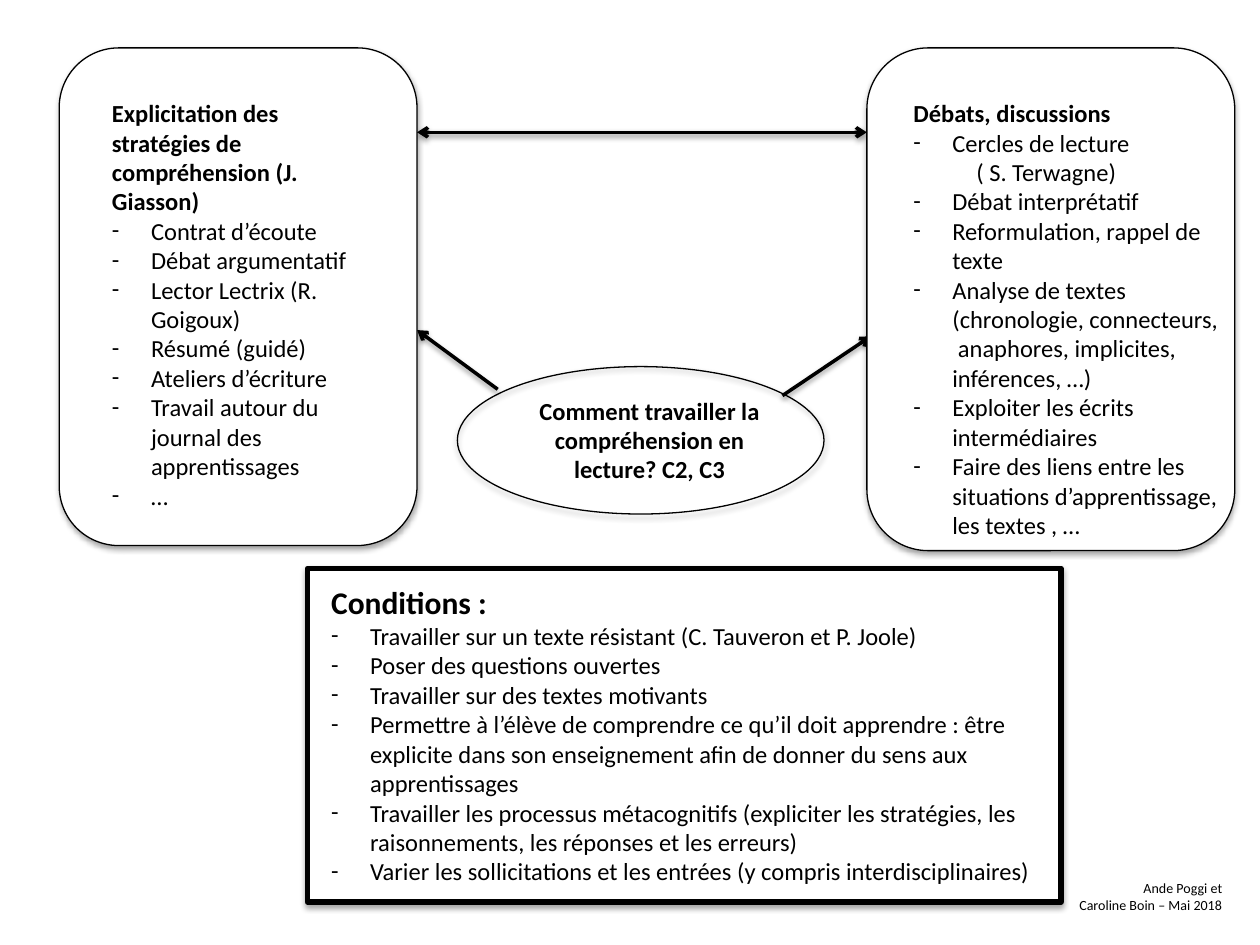
from lxml import etree
from pptx import Presentation
from pptx.dml.color import RGBColor
from pptx.enum.shapes import MSO_CONNECTOR, MSO_SHAPE
from pptx.enum.text import MSO_AUTO_SIZE, PP_ALIGN
from pptx.oxml.ns import qn
from pptx.util import Inches, Pt

STRAIGHT = MSO_CONNECTOR.STRAIGHT
RECT = MSO_SHAPE.RECTANGLE
ROUNDED = MSO_SHAPE.ROUNDED_RECTANGLE
OVAL = MSO_SHAPE.OVAL
LEFT, CENTER, RIGHT = PP_ALIGN.LEFT, PP_ALIGN.CENTER, PP_ALIGN.RIGHT
FIT = MSO_AUTO_SIZE.SHAPE_TO_FIT_TEXT

STRATEGIES = [
    "Contrat d’écoute",
    "Débat argumentatif",
    "Lector Lectrix (R. Goigoux)",
    "Résumé (guidé)",
    "Ateliers d’écriture",
    "Travail autour du journal des apprentissages",
    "…",
]
DEBATES = [
    "Cercles de lecture",
    "\t( S. Terwagne)",
    "Débat interprétatif",
    "Reformulation, rappel de texte",
    "Analyse de textes (chronologie, connecteurs,  anaphores, implicites, inférences, …)",
    "Exploiter les écrits intermédiaires",
    "Faire des liens entre les situations d’apprentissage, les textes , …",
]
CONDITIONS = [
    "Travailler sur un texte résistant (C. Tauveron et P. Joole)",
    "Poser des questions ouvertes",
    "Travailler sur des textes motivants",
    "Permettre à l’élève de comprendre ce qu’il doit apprendre : être explicite "
    "dans son enseignement afin de donner du sens aux apprentissages",
    "Travailler les processus métacognitifs (expliciter les stratégies, les "
    "raisonnements, les réponses et les erreurs)",
    "Varier les sollicitations et les entrées (y compris interdisciplinaires)",
]


def rgb(value):
    return RGBColor.from_string(value)


def add_xml(parent, tag, **attrs):
    return etree.SubElement(parent, qn(tag), {k: str(v) for k, v in attrs.items()})


class Board:
    font = "Calibri"
    ink = "000000"
    paper = "FFFFFF"
    size = 14
    indent = 0.31

    def __init__(self, slide):
        self.slide = slide

    def shadow(self, shape, distance, opacity):
        effects = add_xml(shape._element.spPr, "a:effectLst")
        outer = add_xml(effects, "a:outerShdw", blurRad=Pt(3.1), dist=Pt(distance),
                        dir=90 * 60000, rotWithShape=0)
        color = add_xml(outer, "a:srgbClr", val=self.ink)
        add_xml(color, "a:alpha", val=opacity * 1000)

    def outline(self, shape, width):
        shape.line.color.rgb = rgb(self.ink)
        shape.line.width = Pt(width)

    def frame(self, kind, box, width=0.75, filled=True):
        shape = self.slide.shapes.add_shape(kind, *map(Inches, box))
        if filled:
            shape.fill.solid()
            shape.fill.fore_color.rgb = rgb(self.paper)
        else:
            shape.fill.background()
        self.outline(shape, width)
        self.shadow(shape, 1.8, 35)

    def arrow(self, start, end, double=False):
        line = self.slide.shapes.add_connector(STRAIGHT, *map(Inches, start + end))
        self.outline(line, 2)
        ln = line.line._get_or_add_ln()
        if double:
            add_xml(ln, "a:headEnd", type="arrow")
        add_xml(ln, "a:tailEnd", type="arrow")
        self.shadow(line, 1.6, 38)

    def text_box(self, box):
        tf = self.slide.shapes.add_textbox(*map(Inches, box)).text_frame
        tf.word_wrap = True
        tf.auto_size = FIT
        return tf

    def set_text(self, p, text, size, bold=False, align=LEFT):
        p.text = text
        p.alignment = align
        p.font.name = self.font
        p.font.size = Pt(size)
        p.font.bold = bold
        p.font.color.rgb = rgb(self.ink)

    def lines(self, box, texts, size, bold=False, align=LEFT):
        tf = self.text_box(box)
        for i, text in enumerate(texts):
            p = tf.add_paragraph() if i else tf.paragraphs[0]
            self.set_text(p, text, size, bold, align)

    def bullet_list(self, box, title, items, title_size=14):
        tf = self.text_box(box)
        self.set_text(tf.paragraphs[0], title, title_size, bold=True)
        for item in items:
            p = tf.add_paragraph()
            pPr = p._p.get_or_add_pPr()
            if item.startswith("\t"):
                add_xml(add_xml(pPr, "a:tabLst"), "a:tab", pos=Inches(0.5), algn="l")
            else:
                pPr.set("marL", str(Inches(self.indent)))
                pPr.set("indent", str(-Inches(self.indent)))
                add_xml(pPr, "a:buFont", typeface=self.font)
                add_xml(pPr, "a:buChar", char="-")
            self.set_text(p, item, self.size)


def main():
    prs = Presentation()
    prs.slide_width, prs.slide_height = Inches(10), Inches(7.5)
    board = Board(prs.slides.add_slide(prs.slide_layouts[6]))

    board.frame(OVAL, (3.63, 2.91, 2.91, 1.17), filled=False)
    board.lines((4.1, 3.09, 2.11, 0.81),
                ["Comment travailler la compréhension en lecture? C2, C3"],
                14, bold=True, align=CENTER)

    board.frame(RECT, (2.44, 4.51, 5.98, 2.65), width=3)
    board.bullet_list((2.53, 4.58, 6.04, 2.76), "Conditions :", CONDITIONS, 18)

    board.arrow((3.95, 3.09), (3.31, 2.62))
    board.arrow((6.21, 3.14), (6.91, 2.67))
    board.arrow((3.31, 1.05), (6.88, 1.05), double=True)

    board.frame(ROUNDED, (0.47, 0.38, 2.84, 3.95))
    board.frame(ROUNDED, (6.88, 0.38, 2.92, 3.99))
    board.bullet_list((0.79, 0.73, 2.29, 3.64),
                      "Explicitation des stratégies de compréhension (J. Giasson)", STRATEGIES)
    board.bullet_list((7.15, 0.73, 2.65, 3.87), "Débats, discussions", DEBATES)

    board.lines((7.17, 6.93, 2.63, 0.37),
                ["Ande Poggi et", "Caroline Boin – Mai 2018"], 8, align=RIGHT)
    prs.save("out.pptx")


if __name__ == "__main__":
    main()
